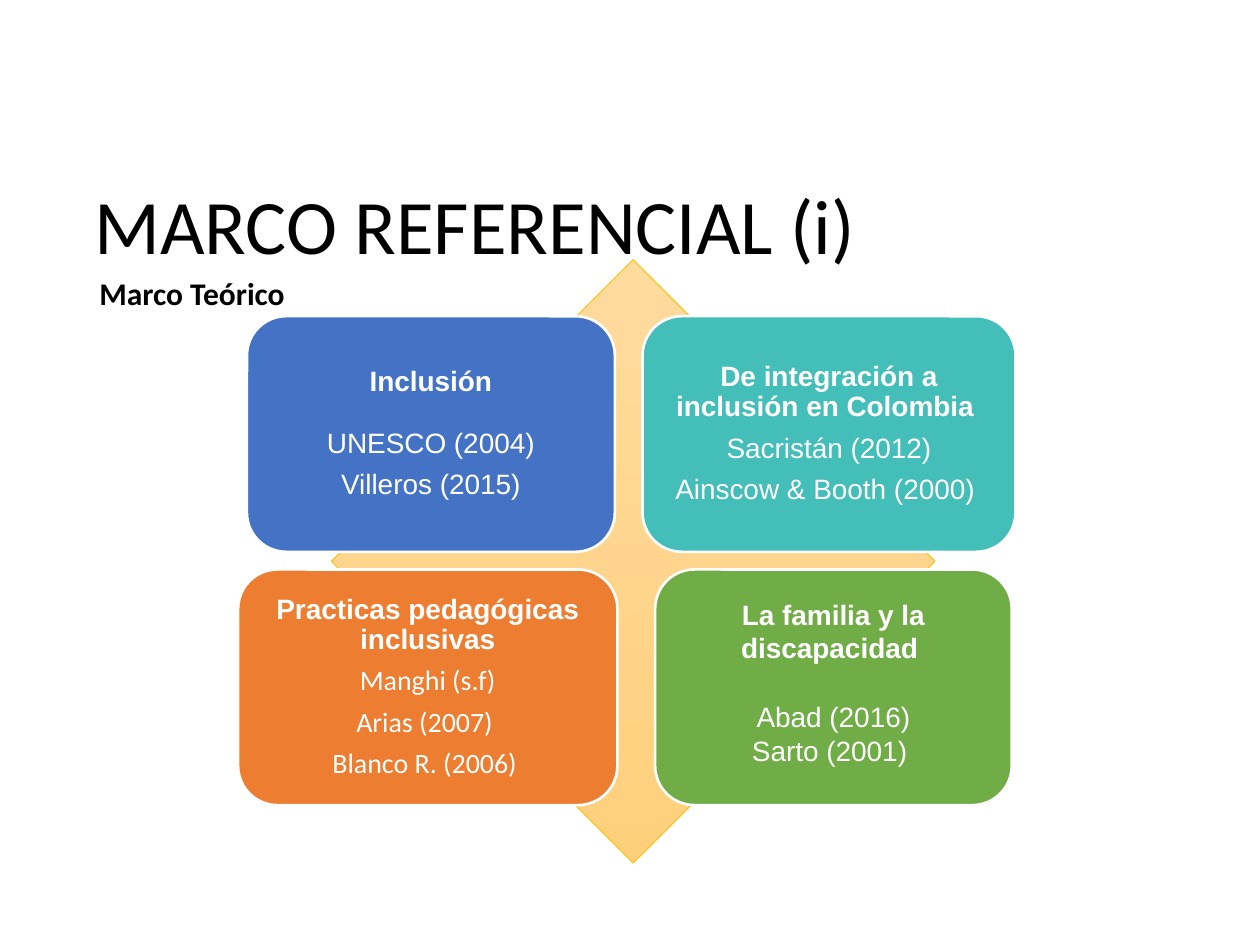
from pptx import Presentation
from pptx import util as u
from pptx.dml.color import RGBColor
from pptx.enum import shapes, text

BLACK = RGBColor(0x00, 0x00, 0x00)
WHITE = RGBColor(0xFF, 0xFF, 0xFF)
BLUE = RGBColor(0x44, 0x72, 0xC4)
TEAL = RGBColor(0x43, 0xBE, 0xB9)
ORANGE = RGBColor(0xED, 0x7D, 0x31)
GREEN = RGBColor(0x70, 0xAD, 0x47)
GOLD = RGBColor(0xFF, 0xC0, 0x00)
CREAM = RGBColor(0xFF, 0xDB, 0x9E)
SAND = RGBColor(0xFF, 0xD0, 0x7C)


class Board:
    head_font = "Arial"
    base_font = "Calibri"
    size = 16

    def __init__(self, deck):
        self.slide = deck.slides.add_slide(deck.slide_layouts[6])

    def add_words(self, par, words, font, size, color, bold=False):
        run = par.add_run()
        run.text = words
        run.font.name = font
        run.font.size = u.Pt(size)
        run.font.bold = bold
        run.font.color.rgb = color

    def label(self, at, words, size, anchor, bold=False):
        box = self.slide.shapes.add_textbox(*map(u.Inches, at))
        frame = box.text_frame
        frame.word_wrap = True
        frame.vertical_anchor = anchor
        par = frame.paragraphs[0]
        par.line_spacing = 0.9
        self.add_words(par, words, self.base_font, size, BLACK, bold)

    def shape(self, kind, at, line, width):
        item = self.slide.shapes.add_shape(kind, *map(u.Inches, at))
        item.shadow.inherit = False
        item.line.color.rgb = line
        item.line.width = u.Pt(width)
        return item

    def diamond(self, at):
        item = self.shape(shapes.MSO_SHAPE.DIAMOND, at, GOLD, 0.5)
        item.fill.gradient()
        item.fill.gradient_angle = 270
        for stop, color in zip(item.fill.gradient_stops, (CREAM, SAND)):
            stop.color.rgb = color

    def card(self, at, fill, head, names, font="Arial", lines=0.9,
             after=6.4, gap=0, inset=0.07, low=0.07):
        item = self.shape(shapes.MSO_SHAPE.ROUNDED_RECTANGLE, at, WHITE, 1.5)
        item.fill.solid()
        item.fill.fore_color.rgb = fill
        frame = item.text_frame
        frame.word_wrap = True
        frame.vertical_anchor = text.MSO_ANCHOR.MIDDLE
        frame.margin_left = frame.margin_right = u.Inches(inset)
        frame.margin_top = u.Inches(inset)
        frame.margin_bottom = u.Inches(low)
        for i, words in enumerate([head] + names):
            par = frame.add_paragraph() if i else frame.paragraphs[0]
            par.alignment = text.PP_ALIGN.CENTER
            par.line_spacing = lines
            # The heading stands apart from the names when a gap is given
            par.space_after = u.Pt(gap if gap and not i else after)
            self.add_words(par, words, font if i else self.head_font,
                           self.size, WHITE, not i)


def main():
    deck = Presentation()
    deck.slide_width = u.Inches(10)
    deck.slide_height = u.Inches(7.5)
    board = Board(deck)

    # Title
    board.label((0.65, 1.1, 8.62, 1.45), "MARCO REFERENCIAL (i)", 44,
                text.MSO_ANCHOR.MIDDLE)

    # Matrix: diamond behind four theme cards
    board.diamond((2.63, 2.06, 4.79, 4.79))
    top, low, high = 2.51, 4.52, 1.87
    board.card((1.96, top, 2.92, high), BLUE, "Inclusión",
               ["UNESCO (2004)", "Villeros (2015)"], gap=18.3)
    board.card((5.1, top, 2.96, high), TEAL,
               "De integración a inclusión en Colombia ",
               ["Sacristán (2012)", "Ainscow & Booth (2000) "])
    board.card((1.89, low, 3.01, high), ORANGE,
               "Practicas pedagógicas inclusivas",
               ["Manghi (s.f)", "Arias (2007) ", "Blanco R. (2006) "],
               font=board.base_font)
    board.card((5.2, low, 2.83, high), GREEN, "La familia y la discapacidad ",
               ["Abad (2016)", "Sarto (2001) "], lines=1.0, after=0.4,
               gap=20, inset=0.08, low=0.16)

    # Subtitle
    board.label((0.69, 1.63, 4.23, 0.9), "Marco Teórico", 18,
                text.MSO_ANCHOR.BOTTOM, bold=True)

    deck.save("out.pptx")


if __name__ == "__main__":
    main()
